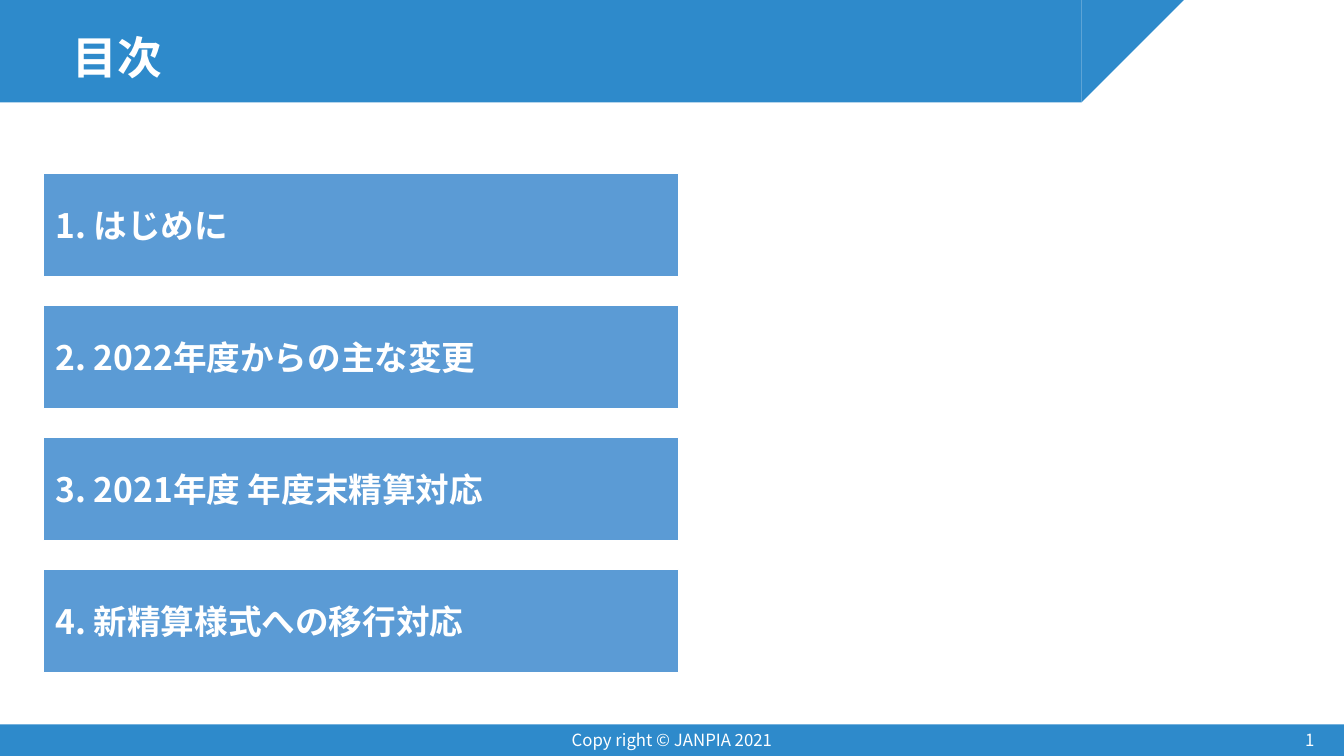
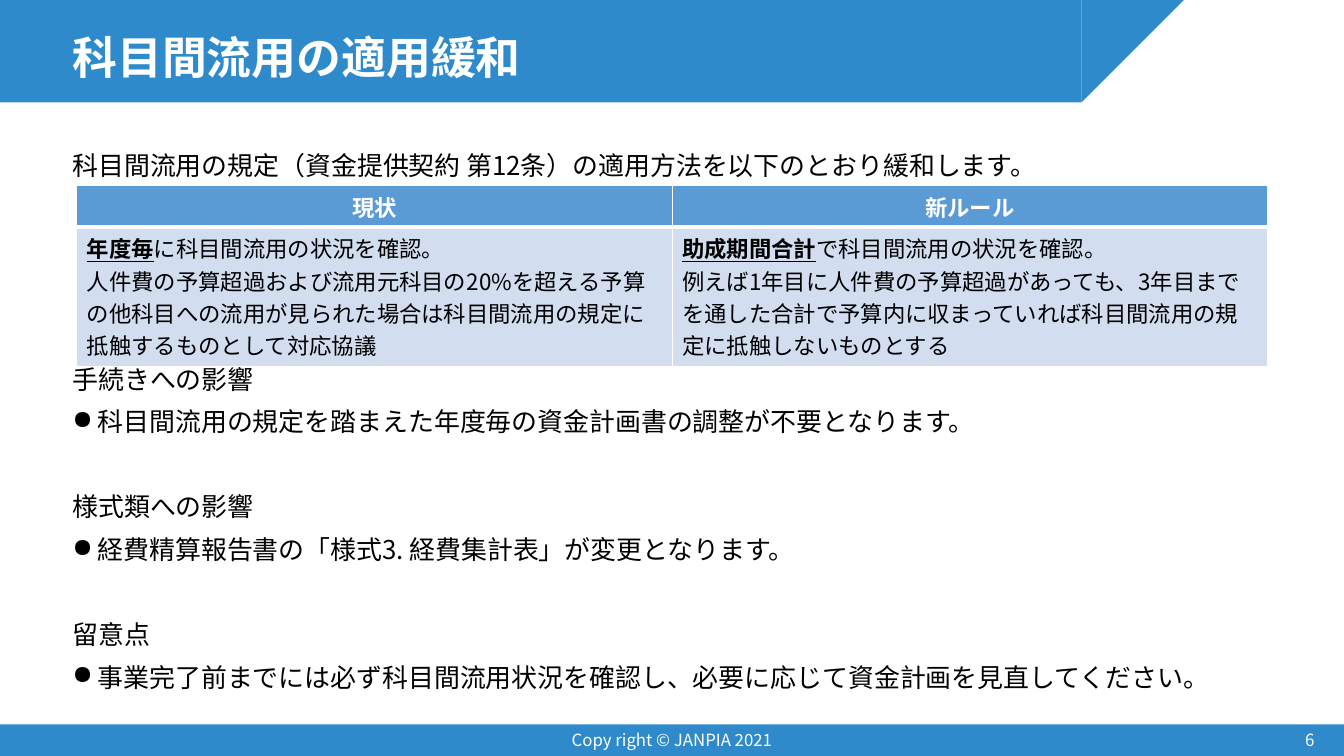
import pptx
import pptx.util
import pptx.dml.color
import pptx.enum.shapes
import pptx.enum.text
import pptx.oxml
import pptx.oxml.ns

Pt = pptx.util.Pt
SHAPE = pptx.enum.shapes.MSO_SHAPE
ALIGN = pptx.enum.text.PP_ALIGN
MIDDLE = pptx.enum.text.MSO_ANCHOR.MIDDLE
NO_FIT = pptx.enum.text.MSO_AUTO_SIZE.NONE
FONT = "Noto Sans CJK JP"
COLORS = {"band": "2E8ACB", "box": "5B9BD5", "cell": "D2DEEF",
          "white": "FFFFFF", "black": "000000"}
NSDECL = pptx.oxml.ns.nsdecls("a")


def rgb(name):
    return pptx.dml.color.RGBColor.from_string(COLORS[name])


def add_run(p, text, size, color, bold=False, underline=False):
    r = p.add_run()
    r.text = text
    r.font.name = FONT
    r.font.size = Pt(size)
    r.font.bold = bold
    r.font.underline = underline
    r.font.color.rgb = rgb(color)
    # East Asian typeface follows the Latin one
    r.font._element.append(pptx.oxml.parse_xml(f'<a:ea {NSDECL} typeface="{FONT}"/>'))


prs = pptx.Presentation()
prs.slide_width, prs.slide_height = Pt(960), Pt(540)
layout = prs.slide_layouts[5]

# Slides with the shared title and footer
slides = []
for title, number in [("目次", "1"), ("科目間流用の適用緩和", "6")]:
    s = prs.slides.add_slide(layout)
    slides.append(s)
    sp = s.shapes.title
    sp.left, sp.top, sp.width, sp.height = Pt(44.6), Pt(23), Pt(828), Pt(39.6)
    tf = sp.text_frame
    tf.word_wrap = True
    tf.auto_size = NO_FIT
    tf.vertical_anchor = MIDDLE
    p = tf.paragraphs[0]
    p.alignment = ALIGN.LEFT
    p.line_spacing = 0.9
    add_run(p, title, 32, "white", bold=True)

    for text, left, width, align in [
            ("Copy right © JANPIA 2021", 318, 324, ALIGN.CENTER),
            (number, 730, 216, ALIGN.RIGHT)]:
        sp = s.shapes.add_textbox(Pt(left), Pt(514), Pt(width), Pt(28.8))
        tf = sp.text_frame
        tf.word_wrap = True
        tf.vertical_anchor = MIDDLE
        p = tf.paragraphs[0]
        p.alignment = align
        add_run(p, text, 12, "white")

contents, rules = slides

# Bands, drawn once and moved to the layout
for i, (kind, left, top, width, height, angle) in enumerate([
        (SHAPE.RECTANGLE, 0, 517.5, 960, 22.5, 0),
        (SHAPE.RECTANGLE, 0, 0, 772.5, 73.2, 0),
        (SHAPE.RIGHT_TRIANGLE, 772.5, 0, 73.2, 73.2, 90)]):
    sp = contents.shapes.add_shape(kind, Pt(left), Pt(top), Pt(width), Pt(height))
    sp.rotation = angle
    sp.shadow.inherit = False
    sp.fill.solid()
    sp.fill.fore_color.rgb = rgb("band")
    sp.line.fill.background()
    layout.shapes.element.insert(2 + i, sp.element)

# Contents: one box per chapter
for i, text in enumerate(["1. はじめに", "2. 2022年度からの主な変更",
                          "3. 2021年度 年度末精算対応", "4. 新精算様式への移行対応"]):
    sp = contents.shapes.add_shape(SHAPE.RECTANGLE, Pt(31), Pt(123.9 + 94.3 * i),
                                   Pt(453.6), Pt(73.4))
    sp.shadow.inherit = False
    sp.fill.solid()
    sp.fill.fore_color.rgb = rgb("box")
    sp.line.color.rgb = rgb("white")
    sp.line.width = Pt(0.75)
    tf = sp.text_frame
    tf.word_wrap = True
    tf.vertical_anchor = MIDDLE
    tf.margin_left = tf.margin_right = Pt(8.6)
    tf.margin_top = tf.margin_bottom = 0
    p = tf.paragraphs[0]
    p.alignment = ALIGN.LEFT
    add_run(p, text, 24, "white", bold=True)

# Rules: introduction above the table, effects below it
intro = ["科目間流用の規定（資金提供契約 第12条）の適用方法を以下のとおり緩和します。"]
effects = ["手続きへの影響",
           "●科目間流用の規定を踏まえた年度毎の資金計画書の調整が不要となります。",
           "様式類への影響",
           "●経費精算報告書の「様式3. 経費集計表」が変更となります。",
           "留意点",
           "●事業完了前までには必ず科目間流用状況を確認し、必要に応じて資金計画を見直してください。"]
for top, height, lines in [(104.4, 25, intro), (257.3, 240, effects)]:
    sp = rules.shapes.add_textbox(Pt(51.8), Pt(top), Pt(850), Pt(height))
    tf = sp.text_frame
    tf.word_wrap = True
    tf.margin_left = tf.margin_top = tf.margin_right = tf.margin_bottom = 0
    for i, line in enumerate(lines):
        p = tf.add_paragraph() if i else tf.paragraphs[0]
        bullet = line.startswith("●")
        if bullet:
            pPr = p._p.get_or_add_pPr()
            pPr.set("marL", str(Pt(18)))
            pPr.set("indent", str(-Pt(18)))
            pPr.append(pptx.oxml.parse_xml(f'<a:buChar {NSDECL} char="●"/>'))
        p.line_spacing = Pt(24.4)
        if i:
            p.space_before = Pt(6 if bullet else 36.4)
        add_run(p, line.lstrip("●"), 18.5, "black")

# Comparison table: each cell is a list of paragraphs of (text, emphasised) runs
rows = [
    [[[("現状", False)]], [[("新ルール", False)]]],
    [[[("年度毎", True), ("に科目間流用の状況を確認。", False)],
      [("人件費の予算超過および流用元科目の20%を超える予算の他科目への流用が見られた場合は"
        "科目間流用の規定に抵触するものとして対応協議", False)]],
     [[("助成期間合計", True), ("で科目間流用の状況を確認。", False)],
      [("例えば1年目に人件費の予算超過があっても、3年目までを通した合計で予算内に"
        "収まっていれば科目間流用の規定に抵触しないものとする", False)]]],
]
table = rules.shapes.add_table(2, 2, Pt(54.9), Pt(132.7), Pt(850.4), Pt(129)).table
for i, height in enumerate([29.5, 99.5]):
    table.rows[i].height = Pt(height)
    header = i == 0
    for j, paragraphs in enumerate(rows[i]):
        cell = table.cell(i, j)
        for k, runs in enumerate(paragraphs):
            p = cell.text_frame.add_paragraph() if k else cell.text_frame.paragraphs[0]
            p.alignment = ALIGN.CENTER if header else ALIGN.LEFT
            for text, strong in runs:
                add_run(p, text, 16, "white" if header else "black",
                        bold=header or strong, underline=strong)
        tcPr = cell._tc.get_or_add_tcPr()
        for side in "LRTB":
            thick = (header and side == "B") or (not header and side == "T")
            tcPr.append(pptx.oxml.parse_xml(
                f'<a:ln{side} {NSDECL} w="{Pt(3 if thick else 1)}"><a:solidFill>'
                f'<a:srgbClr val="{COLORS["white"]}"/></a:solidFill></a:ln{side}>'))
        cell.fill.solid()
        cell.fill.fore_color.rgb = rgb("box" if header else "cell")

prs.save("out.pptx")
